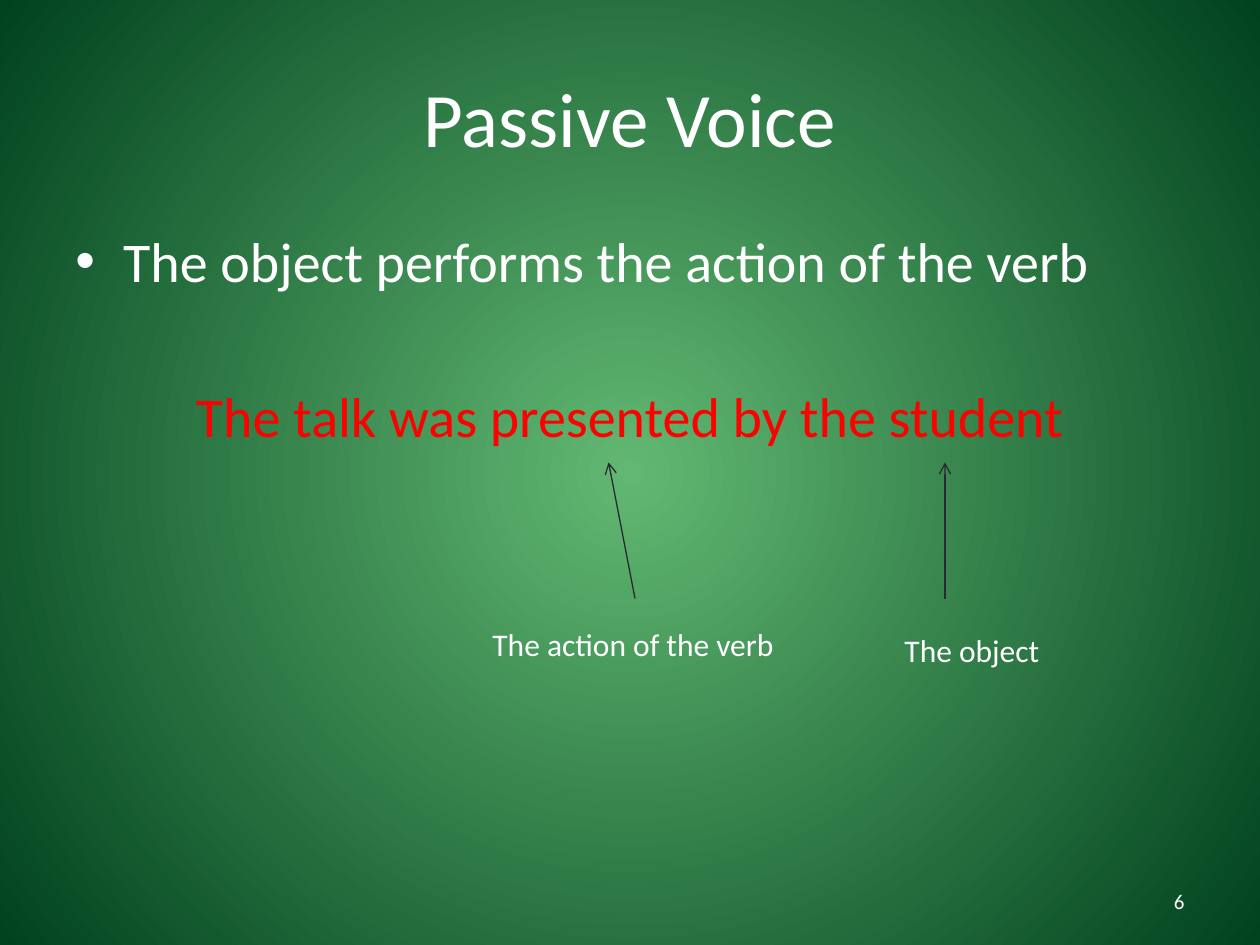
from dataclasses import dataclass

from lxml import etree
from pptx import Presentation
from pptx.dml.color import RGBColor
from pptx.enum.shapes import MSO_CONNECTOR
from pptx.enum.text import MSO_ANCHOR, MSO_AUTO_SIZE, PP_ALIGN
from pptx.oxml.ns import qn
from pptx.util import Inches, Pt

LEFT, CENTER, RIGHT = PP_ALIGN.LEFT, PP_ALIGN.CENTER, PP_ALIGN.RIGHT
TOP, MIDDLE = MSO_ANCHOR.TOP, MSO_ANCHOR.MIDDLE
STRAIGHT = MSO_CONNECTOR.STRAIGHT


@dataclass(frozen=True)
class Theme:
    font: str = "Calibri"
    text: RGBColor = RGBColor(0xFF, 0xFF, 0xFF)
    example: RGBColor = RGBColor(0xFF, 0x00, 0x00)
    arrow: RGBColor = RGBColor(0x29, 0x29, 0x34)
    glow: RGBColor = RGBColor(0x62, 0xB8, 0x72)
    edge: RGBColor = RGBColor(0x00, 0x42, 0x1E)
    title_size: int = 44
    body_size: int = 32
    label_size: int = 18
    number_size: int = 12


THEME = Theme()


def paint_background(slide):
    """Fill the slide with a circular gradient that spreads from its centre."""
    fill = slide.background.fill
    fill.gradient()
    for stop, color, position in zip(fill.gradient_stops, (THEME.glow, THEME.edge), (0, 1)):
        stop.color.rgb = color
        stop.position = position
    gradient = slide.element.find(".//" + qn("a:gradFill"))
    gradient.remove(gradient.find(qn("a:lin")))
    circle = etree.SubElement(gradient, qn("a:path"), path="circle")
    etree.SubElement(circle, qn("a:fillToRect"), l="50000", t="50000", r="50000", b="50000")


def style_paragraph(paragraph, text, size, color=THEME.text, align=LEFT):
    paragraph.text = text
    paragraph.alignment = align
    paragraph.font.name = THEME.font
    paragraph.font.size = Pt(size)
    paragraph.font.color.rgb = color


def add_text(slide, box, text, size, align=LEFT, anchor=TOP, wrap=True):
    """Add a text box with one paragraph and return its text frame."""
    frame = slide.shapes.add_textbox(*map(Inches, box)).text_frame
    frame.word_wrap = wrap
    frame.vertical_anchor = anchor
    style_paragraph(frame.paragraphs[0], text, size, align=align)
    return frame


def add_bullet(paragraph, indent):
    properties = paragraph._p.get_or_add_pPr()
    properties.set("marL", str(Inches(indent)))
    properties.set("indent", str(-Inches(indent)))
    etree.SubElement(properties, qn("a:buFont"), typeface="Arial")
    etree.SubElement(properties, qn("a:buChar"), char="•")


def add_body(slide, box, rule, example):
    frame = add_text(slide, box, rule, THEME.body_size)
    bullet = frame.paragraphs[0]
    bullet.space_before = Pt(5)
    add_bullet(bullet, 0.38)
    sentence = frame.add_paragraph()
    style_paragraph(sentence, example, THEME.body_size, THEME.example, CENTER)
    sentence.space_before = Pt(50)


def add_arrow(slide, start, end):
    arrow = slide.shapes.add_connector(STRAIGHT, *map(Inches, (*start, *end)))
    arrow.line.color.rgb = THEME.arrow
    arrow.line.width = Pt(0.75)
    etree.SubElement(arrow.line._get_or_add_ln(), qn("a:tailEnd"), type="arrow")
    etree.SubElement(arrow._element.spPr, qn("a:effectLst"))


def add_callout(slide, box, text, start_x, end_x):
    """Label a word of the example with an arrow that points up at it."""
    add_arrow(slide, (start_x, 4.75), (end_x, 3.67))
    frame = add_text(slide, box, text, THEME.label_size, wrap=False)
    frame.auto_size = MSO_AUTO_SIZE.SHAPE_TO_FIT_TEXT


def build_slide(presentation):
    slide = presentation.slides.add_slide(presentation.slide_layouts[6])
    paint_background(slide)
    add_text(slide, (0.5, 0.3, 9, 1.25), "Passive Voice", THEME.title_size, CENTER, MIDDLE)
    add_body(
        slide,
        (0.5, 1.75, 9, 4.95),
        "The object performs the action of the verb",
        "The talk was presented by the student",
    )
    add_callout(slide, (7.08, 4.96, 1.29, 0.4), "The object", 7.5, 7.5)
    add_callout(slide, (3.81, 4.91, 2.46, 0.4), "The action of the verb", 5.04, 4.83)
    add_text(slide, (7.17, 6.95, 2.33, 0.4), "6", THEME.number_size, RIGHT, MIDDLE)


def main():
    presentation = Presentation()
    presentation.slide_width = Inches(10)
    presentation.slide_height = Inches(7.5)
    build_slide(presentation)
    presentation.save("out.pptx")


if __name__ == "__main__":
    main()
